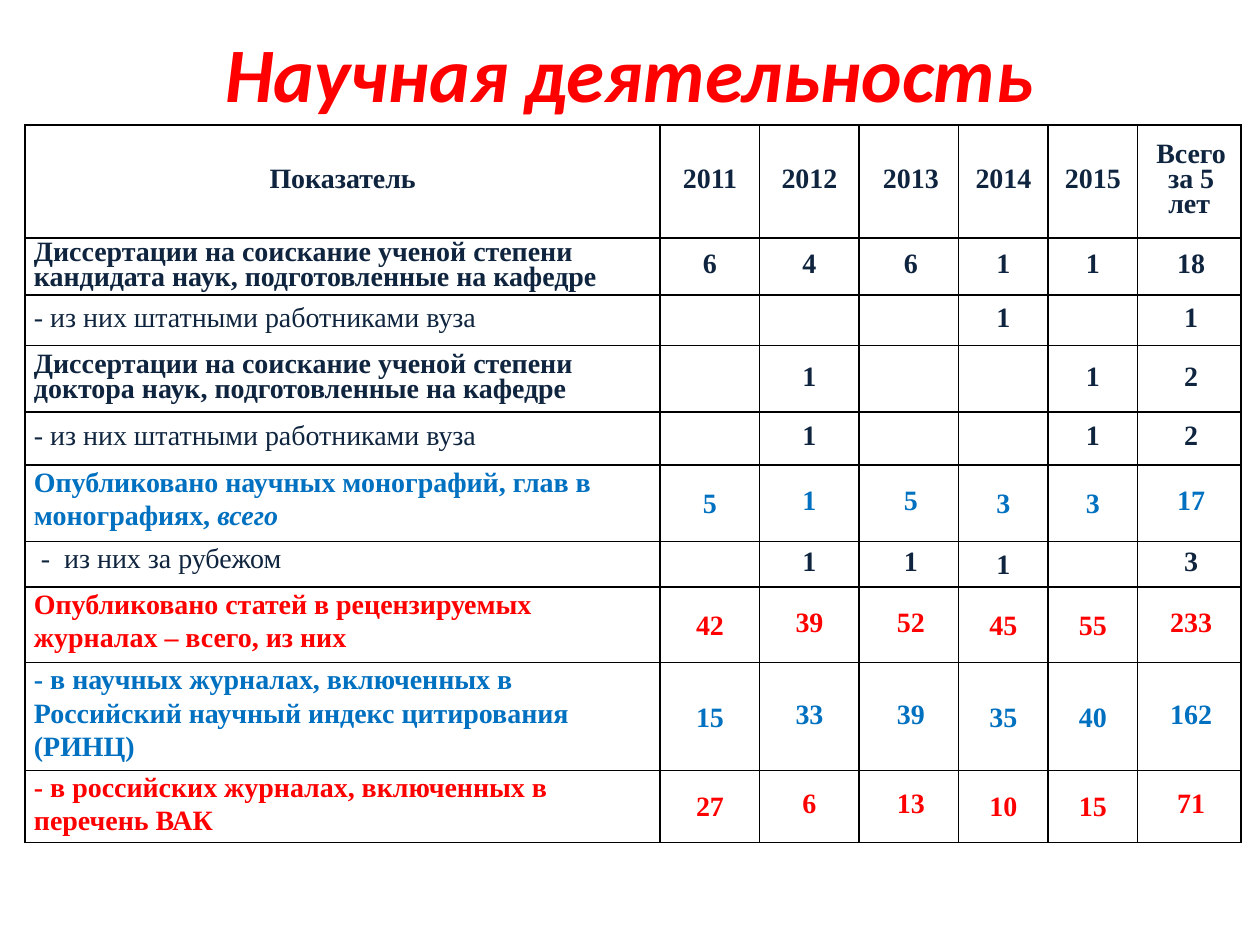
from lxml import etree
from pptx import Presentation
from pptx import util as u
from pptx.dml.color import RGBColor
from pptx.enum import text
from pptx.oxml import ns

NAVY = RGBColor(0x0F, 0x24, 0x3E)
BLUE = RGBColor(0x00, 0x70, 0xC0)
RED = RGBColor(0xFF, 0x00, 0x00)
BLACK = RGBColor(0x00, 0x00, 0x00)

COLUMN_WIDTHS = [5.04, 0.79, 0.79, 0.79, 0.71, 0.71, 0.82]
ROW_HEIGHTS = [0.9, 0.45, 0.4, 0.53, 0.42, 0.61, 0.36, 0.6, 0.6, 0.36]
FIRST_PUBLICATION_ROW = 5
TIGHT_COLUMNS = {2, 3, 6}
INDENTED_COLUMNS = {3, 6}

STAFF = "- из них штатными работниками вуза"
MONOGRAPHS = "Опубликовано научных монографий, глав в монографиях, "
ROWS = [
    (NAVY, True, ["Показатель", "2011", "2012", "2013", "2014", "2015", "Всего\nза 5 лет"]),
    (NAVY, True, ["Диссертации на соискание ученой степени кандидата наук, "
                  "подготовленные на кафедре", "6", "4", "6", "1", "1", "18"]),
    (NAVY, False, [STAFF, "", "", "", "1", "", "1"]),
    (NAVY, True, ["Диссертации на соискание ученой степени доктора наук, "
                  "подготовленные на кафедре", "", "1", "", "", "1", "2"]),
    (NAVY, False, [STAFF, "", "1", "", "", "1", "2"]),
    (BLUE, True, [MONOGRAPHS, "5", "1", "5", "3", "3", "17"]),
    (NAVY, False, [" -  из них за рубежом", "", "1", "1", "1", "", "3"]),
    (RED, True, ["Опубликовано статей в рецензируемых журналах – всего, из них",
                 "42", "39", "52", "45", "55", "233"]),
    (BLUE, True, ["- в научных журналах, включенных в Российский научный индекс "
                  "цитирования (РИНЦ)", "15", "33", "39", "35", "40", "162"]),
    (RED, True, ["- в российских журналах, включенных в перечень ВАК",
                 "27", "6", "13", "10", "15", "71"]),
]


def add_span(para, words, *, color, size=16, font="Times New Roman", bold=True, italic=False):
    span = para.add_run()
    span.text = words
    span.font.name = font
    span.font.size = u.Pt(size)
    span.font.bold = bold
    span.font.italic = italic
    span.font.color.rgb = color


def write_text(frame, words, *, align=text.PP_ALIGN.CENTER, spacing=None, indent=0, **style):
    for index, line in enumerate(words.split("\n")):
        para = frame.add_paragraph() if index else frame.paragraphs[0]
        para.alignment = align
        if spacing:
            para.line_spacing = spacing
        if indent:
            para._p.get_or_add_pPr().set("indent", str(u.Inches(indent)))
        add_span(para, line, **style)


def add_title(page, words):
    box = page.shapes.add_textbox(u.Inches(0.5), u.Inches(0.3), u.Inches(9), u.Inches(0.54))
    frame = box.text_frame
    frame.word_wrap = True
    frame.vertical_anchor = text.MSO_ANCHOR.MIDDLE
    write_text(frame, words, color=RED, size=44, font="Calibri", italic=True)


def set_borders(cell):
    properties = cell._tc.get_or_add_tcPr()
    for side in ("a:lnL", "a:lnR", "a:lnT", "a:lnB"):
        line = etree.SubElement(properties, ns.qn(side), w=str(u.Pt(1)))
        fill = etree.SubElement(line, ns.qn("a:solidFill"))
        etree.SubElement(fill, ns.qn("a:srgbClr"), val=str(BLACK))


def format_cell(cell, anchor):
    cell.margin_left = cell.margin_right = u.Inches(0.07)
    cell.margin_top = cell.margin_bottom = 0
    cell.vertical_anchor = anchor
    set_borders(cell)
    cell.fill.background()


def fill_cell(cell, words, row, column, color, bold):
    is_label = column == 0 and row > 0
    is_publication = row >= FIRST_PUBLICATION_ROW
    at_top = is_label and is_publication
    format_cell(cell, text.MSO_ANCHOR.TOP if at_top else text.MSO_ANCHOR.MIDDLE)
    if words:
        write_text(
            cell.text_frame, words, color=color, bold=bold or not is_label,
            align=text.PP_ALIGN.LEFT if is_label else text.PP_ALIGN.CENTER,
            spacing=1.07 if is_publication and column not in TIGHT_COLUMNS else 0.8,
            indent=0.03 if column in INDENTED_COLUMNS else 0)


def add_indicator_table(page):
    frame = page.shapes.add_table(
        len(ROWS), len(COLUMN_WIDTHS), u.Inches(0.2), u.Inches(0.99),
        u.Inches(sum(COLUMN_WIDTHS)), u.Inches(sum(ROW_HEIGHTS)))
    table = frame.table
    table.first_row = table.horz_banding = False
    for column, width in zip(table.columns, COLUMN_WIDTHS):
        column.width = u.Inches(width)
    for row, height in zip(table.rows, ROW_HEIGHTS):
        row.height = u.Inches(height)
    for row, (color, bold, values) in enumerate(ROWS):
        for column, words in enumerate(values):
            fill_cell(table.cell(row, column), words, row, column, color, bold)
    monographs = table.cell(FIRST_PUBLICATION_ROW, 0).text_frame.paragraphs[0]
    add_span(monographs, "всего", color=BLUE, italic=True)


def main():
    deck = Presentation()
    deck.slide_width = u.Inches(10)
    deck.slide_height = u.Inches(7.5)
    page = deck.slides.add_slide(deck.slide_layouts[6])
    add_title(page, "Научная деятельность")
    add_indicator_table(page)
    deck.save("out.pptx")


if __name__ == "__main__":
    main()
